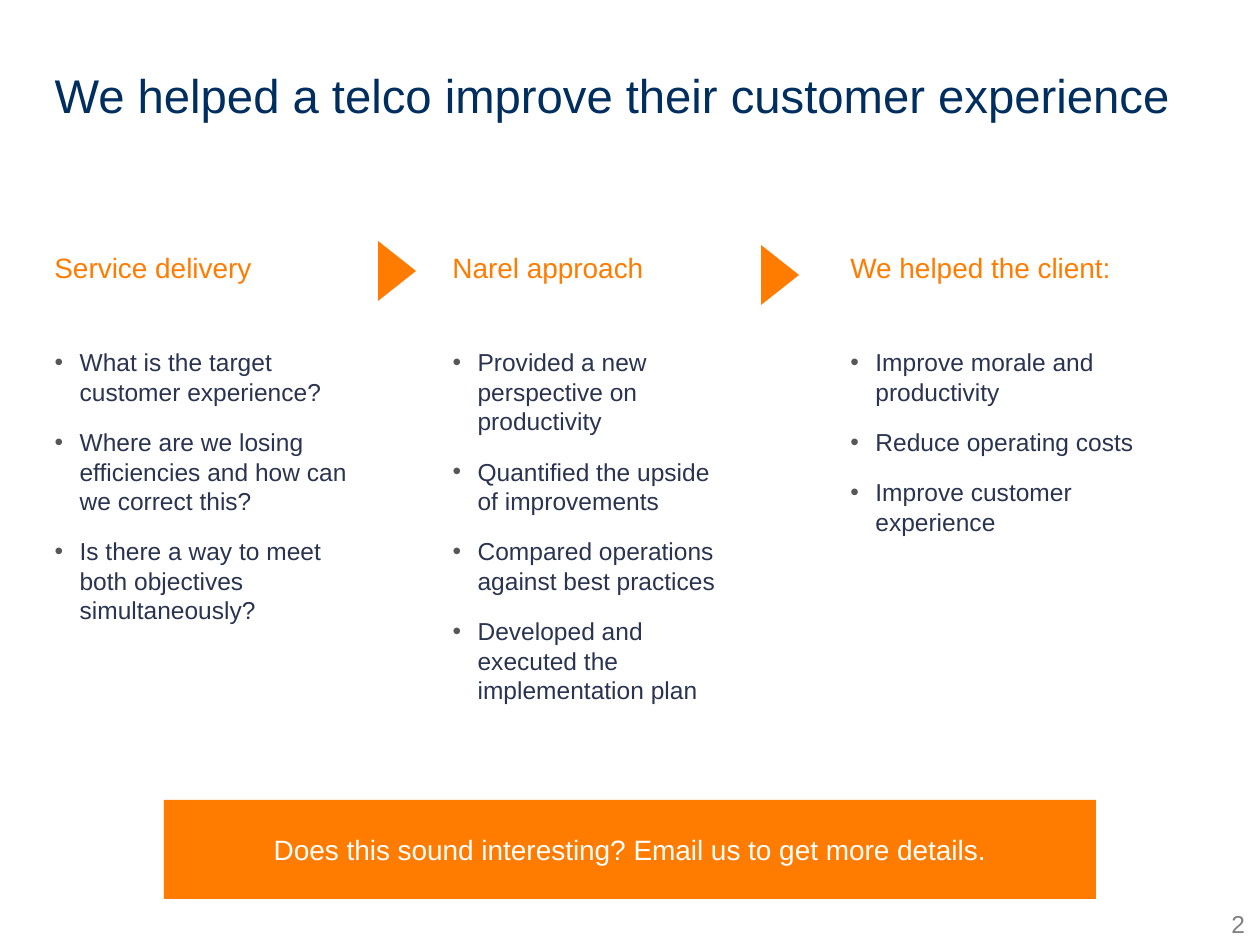
from lxml.etree import SubElement
from pptx import Presentation
from pptx.dml.color import RGBColor
from pptx.enum.shapes import MSO_SHAPE
from pptx.enum.text import MSO_ANCHOR, MSO_AUTO_SIZE, PP_ALIGN
from pptx.oxml.ns import qn
from pptx.util import Pt

SCALE = 914400 / 126
COLORS = {
    "title": "002E5E",
    "accent": "FF7C00",
    "body": "2A3350",
    "bullet": "565756",
    "number": "808080",
    "white": "FFFFFF",
}
FORMATS = {
    "title": {"size": Pt(27), "color": "title"},
    "heading": {"size": Pt(16), "color": "accent"},
    "body": {"size": Pt(14), "color": "body"},
    "banner": {"size": Pt(16), "color": "white"},
    "number": {"size": Pt(14), "color": "number"},
}
COLUMN_STEP = 398
COLUMNS = [
    (320, "Service delivery", [
        "What is the target customer experience?",
        "Where are we losing efficiencies and how can we correct this?",
        "Is there a way to meet both objectives simultaneously?",
    ]),
    (299, "Narel approach", [
        "Provided a new perspective on productivity",
        "Quantified the upside of improvements",
        "Compared operations against best practices",
        "Developed and executed the implementation plan",
    ]),
    (335, "We helped the client:", [
        "Improve morale and productivity",
        "Reduce operating costs",
        "Improve customer experience",
    ]),
]
ARROWS = [(367, 252), (750, 256)]


def px(length):
    """Turn pixels into EMU."""
    return round(length * SCALE)


def place(shape, box):
    """Move a shape to a pixel box of left, top, width and height."""
    for name, length in zip(("left", "top", "width", "height"), box):
        setattr(shape, name, px(length))
    return shape


def add_text_box(page, box):
    """Add an empty text box."""
    return page.shapes.add_textbox(*map(px, box))


def write(shape, lines, style, align=PP_ALIGN.LEFT, anchor=MSO_ANCHOR.TOP, **spacing):
    """Fill a shape with one formatted paragraph per line."""
    frame = shape.text_frame
    settings = {"word_wrap": True, "auto_size": MSO_AUTO_SIZE.NONE, "vertical_anchor": anchor}
    for name, value in settings.items():
        setattr(frame, name, value)
    for index, line in enumerate(lines):
        para = frame.paragraphs[0] if index == 0 else frame.add_paragraph()
        para_format = {"alignment": align, "space_before": Pt(12 if index else 0), **spacing}
        for name, value in para_format.items():
            setattr(para, name, value)
        span = para.add_run()
        span.text = line
        values = {"name": "Arial", "size": FORMATS[style]["size"], "bold": False}
        for name, value in values.items():
            setattr(span.font, name, value)
        span.font.color.rgb = RGBColor.from_string(COLORS[FORMATS[style]["color"]])
    return frame


def add_bullets(frame):
    """Give every paragraph of a list a hanging bullet."""
    for para in frame.paragraphs:
        properties = para._p.get_or_add_pPr()
        properties.set("marL", str(px(25)))
        properties.set("indent", str(px(-25)))
        color = SubElement(properties, qn("a:buClr"))
        SubElement(color, qn("a:srgbClr"), val=COLORS["bullet"])
        SubElement(properties, qn("a:buFont"), typeface="Arial")
        SubElement(properties, qn("a:buChar"), char="•")


def add_accent_shape(page, kind, box):
    """Add a plain orange shape."""
    shape = page.shapes.add_shape(kind, *map(px, box))
    shape.shadow.inherit = False
    shape.fill.solid()
    shape.fill.fore_color.rgb = RGBColor.from_string(COLORS["accent"])
    shape.line.fill.background()
    return shape


def add_title(page, box):
    """Write the slide title."""
    title = place(page.shapes.title, box)
    write(title, ["We helped a telco improve their customer experience"], "title", line_spacing=0.9)


def add_column(page, box, heading, items, body=None):
    """Place a heading and its bullet list in a column."""
    left, top, width, height = box
    write(add_text_box(page, (left, top, width, 53)), [heading], "heading")
    list_box = (left, top + 97, width, height - 97)
    shape = place(body, list_box) if body else add_text_box(page, list_box)
    add_bullets(write(shape, items, "body"))


def add_arrow(page, box):
    """Add a triangle pointing to the next column."""
    add_accent_shape(page, MSO_SHAPE.ISOSCELES_TRIANGLE, box).rotation = 90


def add_banner(page, box):
    """Add the closing call to action."""
    banner = add_accent_shape(page, MSO_SHAPE.RECTANGLE, box)
    write(banner, ["Does this sound interesting? Email us to get more details."],
          "banner", PP_ALIGN.CENTER, MSO_ANCHOR.MIDDLE)


def add_page_number(page, box):
    """Write the page number in the corner."""
    frame = write(add_text_box(page, box), ["2"], "number", PP_ALIGN.RIGHT, line_spacing=0.7)
    for side in ("left", "top", "right", "bottom"):
        setattr(frame, f"margin_{side}", 0)


def main():
    """Build and save the deck."""
    deck = Presentation()
    deck.slide_width, deck.slide_height = px(1260), px(945)
    page = deck.slides.add_slide(deck.slide_layouts.get_by_name("Two Content"))
    bodies = [page.placeholders[1], page.placeholders[2], None]
    add_page_number(page, (1215, 917, 30, 22))
    add_title(page, (42, 66, 1172, 71))
    for index, ((width, heading, items), body) in enumerate(zip(COLUMNS, bodies)):
        add_column(page, (42 + index * COLUMN_STEP, 244, width, 605), heading, items, body)
    for left, top in ARROWS:
        add_arrow(page, (left, top, 60, 38))
    add_banner(page, (164, 800, 932, 99))
    deck.save("out.pptx")


if __name__ == "__main__":
    main()
